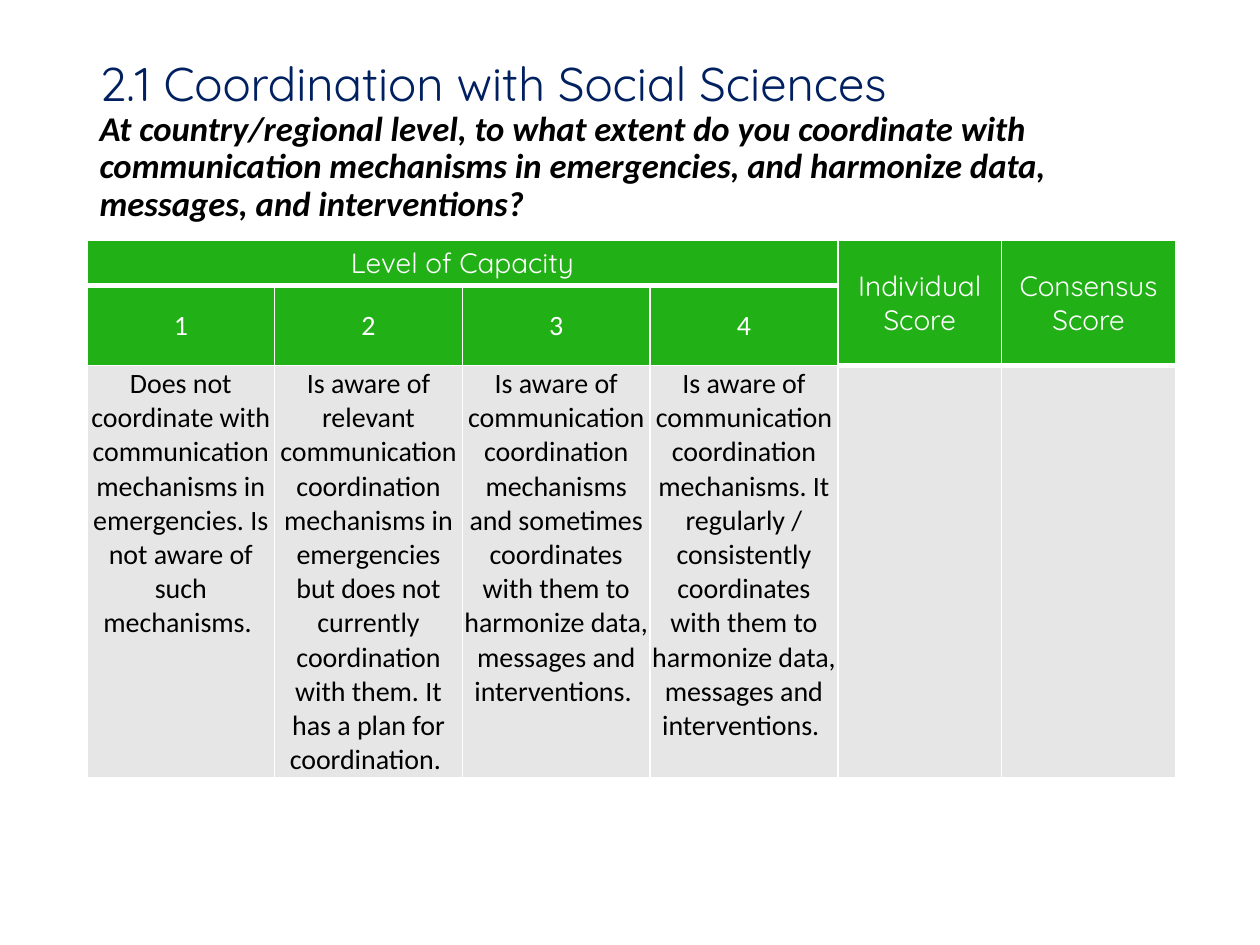
from dataclasses import dataclass

from lxml.etree import SubElement
from pptx import Presentation
from pptx.dml.color import RGBColor
from pptx.enum.text import MSO_ANCHOR as Anchor, MSO_AUTO_SIZE as AutoSize, PP_ALIGN as Align
from pptx.oxml.ns import qn
from pptx.util import Inches, Pt

COLORS = {"navy": "002060", "black": "000000", "white": "FFFFFF",
          "green": "21B116", "gray": "E7E6E6"}
HEADING_FONT, BODY_FONT = "Quicksand", "Calibri"
COLUMN_WIDTHS = [1.49] * 4 + [1.3, 1.38]
ROW_HEIGHTS = [0.35, 0.62, 3.27]
THIN, THICK = 1, 3

LEVELS = [
    "Does not coordinate with communication mechanisms in emergencies. "
    "Is not aware of such mechanisms. ",
    "Is aware of relevant communication coordination mechanisms in emergencies "
    "but does not currently coordination with them. It has a plan for coordination. ",
    "Is aware of communication coordination mechanisms and sometimes coordinates "
    "with them to harmonize data, messages and interventions. ",
    "Is aware of communication coordination mechanisms. It regularly / consistently "
    "coordinates with them to harmonize data, messages and interventions. ",
]


@dataclass
class CellStyle:
    font: str
    color: str
    fill: str
    anchor: Anchor
    insets: tuple[float, float, float, float]  # left, top, right, bottom


HEADER_INSETS = (0.07, 0.04, 0.07, 0.04)
HEADING = CellStyle(HEADING_FONT, "white", "green", Anchor.MIDDLE, HEADER_INSETS)
NUMBER = CellStyle(BODY_FONT, "white", "green", Anchor.MIDDLE, HEADER_INSETS)
DESCRIPTION = CellStyle(BODY_FONT, "black", "gray", Anchor.TOP, (0.01, 0.01, 0.01, 0))


@dataclass
class ScoreCell:
    row: int
    column: int
    text: str
    style: CellStyle
    row_span: int = 1
    column_span: int = 1
    top: int = THIN
    bottom: int = THIN


def rgb(name: str) -> RGBColor:
    return RGBColor.from_string(COLORS[name])


def add_run(paragraph, text: str, size: float, font: str, color: str,
            emphasis: bool = False) -> None:
    run = paragraph.add_run()
    run.text = text
    run.font.size = Pt(size)
    run.font.name = font
    run.font.bold = run.font.italic = emphasis
    run.font.color.rgb = rgb(color)


def add_borders(cell, top: int, bottom: int) -> None:
    properties = cell._tc.get_or_add_tcPr()
    for side, width in (("L", THIN), ("R", THIN), ("T", top), ("B", bottom)):
        line = SubElement(properties, qn(f"a:ln{side}"), w=str(Pt(width)))
        fill = SubElement(line, qn("a:solidFill"))
        SubElement(fill, qn("a:srgbClr"), val=COLORS["white"])


def fill_cell(table, item: ScoreCell) -> None:
    origin = table.cell(item.row, item.column)
    last_row = item.row + item.row_span - 1
    last_column = item.column + item.column_span - 1
    if (last_row, last_column) != (item.row, item.column):
        origin.merge(table.cell(last_row, last_column))
    for row in range(item.row, last_row + 1):
        for column in range(item.column, last_column + 1):
            cell = table.cell(row, column)
            add_borders(cell, item.top, item.bottom)
            cell.fill.solid()
            cell.fill.fore_color.rgb = rgb(item.style.fill)
    origin.vertical_anchor = item.style.anchor
    (origin.margin_left, origin.margin_top,
     origin.margin_right, origin.margin_bottom) = map(Inches, item.style.insets)
    if item.text:
        paragraph = origin.text_frame.paragraphs[0]
        paragraph.alignment = Align.CENTER
        add_run(paragraph, item.text, 16, item.style.font, item.style.color)


def add_title(slide) -> None:
    title = slide.shapes.title
    title.left, title.top, title.width, title.height = map(Inches, (0.69, 0.43, 8.62, 1.18))
    frame = title.text_frame
    frame.word_wrap = True
    frame.auto_size = AutoSize.NONE
    frame.vertical_anchor = Anchor.TOP
    paragraph = frame.paragraphs[0]
    paragraph.alignment = Align.LEFT
    paragraph.line_spacing = 0.9
    add_run(paragraph, "2.1 Coordination with Social Sciences", 27, HEADING_FONT, "navy")
    paragraph.add_line_break()
    add_run(paragraph, "At country/regional level, to what extent do you coordinate with "
            "communication mechanisms in emergencies, and harmonize data, messages, "
            "and interventions?", 19.8, BODY_FONT, "black", emphasis=True)


def add_score_table(slide) -> None:
    table = slide.shapes.add_table(
        len(ROW_HEIGHTS), len(COLUMN_WIDTHS), Inches(0.69), Inches(1.91),
        Inches(sum(COLUMN_WIDTHS)), Inches(sum(ROW_HEIGHTS))).table
    for column, width in zip(table.columns, COLUMN_WIDTHS):
        column.width = Inches(width)
    for row, height in zip(table.rows, ROW_HEIGHTS):
        row.height = Inches(height)

    # Headings
    cells = [ScoreCell(0, 0, "Level of Capacity", HEADING,
                       column_span=len(LEVELS), bottom=THICK)]
    # Capacity levels
    for column, description in enumerate(LEVELS):
        cells.append(ScoreCell(1, column, str(column + 1), NUMBER, top=THICK))
        cells.append(ScoreCell(2, column, description, DESCRIPTION))
    # Score columns
    for column, heading in enumerate(("Individual Score", "Consensus Score"), len(LEVELS)):
        cells.append(ScoreCell(0, column, heading, HEADING, row_span=2, bottom=THICK))
        cells.append(ScoreCell(2, column, "", DESCRIPTION, top=THICK))
    for item in cells:
        fill_cell(table, item)


def main() -> None:
    deck = Presentation()
    deck.slide_width, deck.slide_height = Inches(10), Inches(7.5)
    slide = deck.slides.add_slide(deck.slide_layouts[5])
    add_title(slide)
    add_score_table(slide)
    deck.save("out.pptx")


if __name__ == "__main__":
    main()
